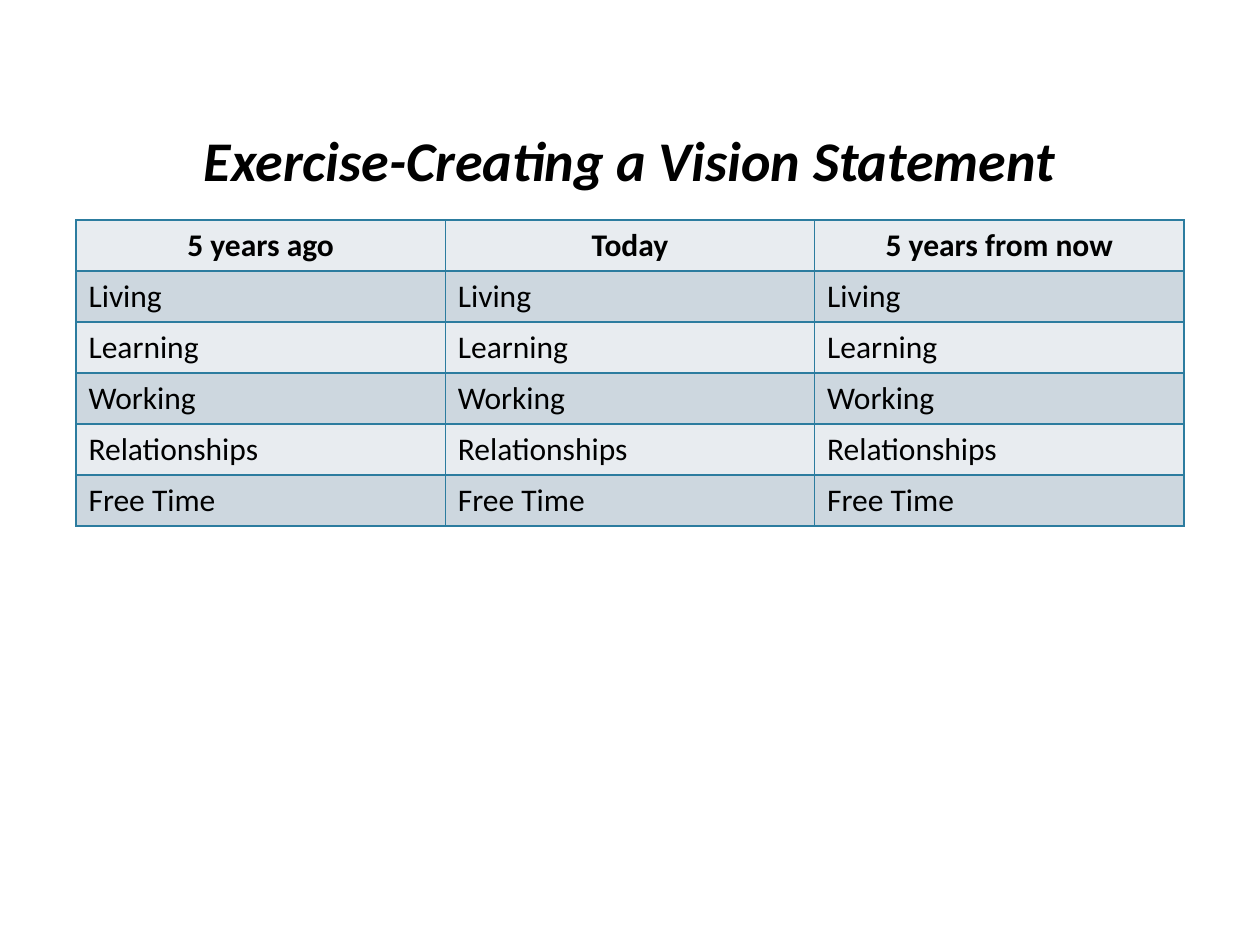
from lxml import etree
from pptx import Presentation
from pptx.dml.color import RGBColor as RGB
from pptx.enum.text import MSO_ANCHOR as ANCHOR, PP_ALIGN as ALIGN
from pptx.oxml.ns import qn
from pptx.util import Pt

PX = 914400 // 126
COLORS = {"text": "000000", "light": "E8ECF0", "dark": "CDD7DF", "border": "2C7C9F"}
HEADERS = ["5 years ago", "Today", "5 years from now"]
TOPICS = ["Living", "Learning", "Working", "Relationships", "Free Time"]


def add_run(p, text, size, bold=False, italic=False):
    r = p.add_run()
    r.text = text
    f = r.font
    f.name, f.size, f.bold, f.italic = "Calibri", Pt(size), bold, italic
    f.color.rgb = RGB.from_string(COLORS["text"])


def add_borders(cell):
    tcPr = cell._tc.get_or_add_tcPr()
    for side in ("lnL", "lnR", "lnT", "lnB"):
        ln = etree.SubElement(tcPr, qn(f"a:{side}"), w=str(Pt(1)))
        fill = etree.SubElement(ln, qn("a:solidFill"))
        etree.SubElement(fill, qn("a:srgbClr"), val=COLORS["border"])


prs = Presentation()
prs.slide_width, prs.slide_height = 1260 * PX, 945 * PX
s = prs.slides.add_slide(prs.slide_layouts[6])

# Title
sp = s.shapes.add_textbox(76 * PX, 15 * PX, 1108 * PX, 184 * PX)
tf = sp.text_frame
tf.word_wrap = True
tf.vertical_anchor = ANCHOR.BOTTOM
p = tf.paragraphs[0]
p.alignment = ALIGN.CENTER
add_run(p, "Exercise-Creating a Vision Statement", 32, bold=True, italic=True)

# Table: the same topics under each point in time
rows = [HEADERS] + [[topic] * len(HEADERS) for topic in TOPICS]
table = s.shapes.add_table(len(rows), len(HEADERS), 76 * PX, 220 * PX,
                           1108 * PX, len(rows) * 51 * PX).table
for i, texts in enumerate(rows):
    for j, text in enumerate(texts):
        cell = table.cell(i, j)
        add_borders(cell)
        cell.fill.solid()
        cell.fill.fore_color.rgb = RGB.from_string(COLORS["dark" if i % 2 else "light"])
        p = cell.text_frame.paragraphs[0]
        p.alignment = ALIGN.LEFT if i else ALIGN.CENTER
        add_run(p, text, 18, bold=i == 0)

prs.save("out.pptx")
